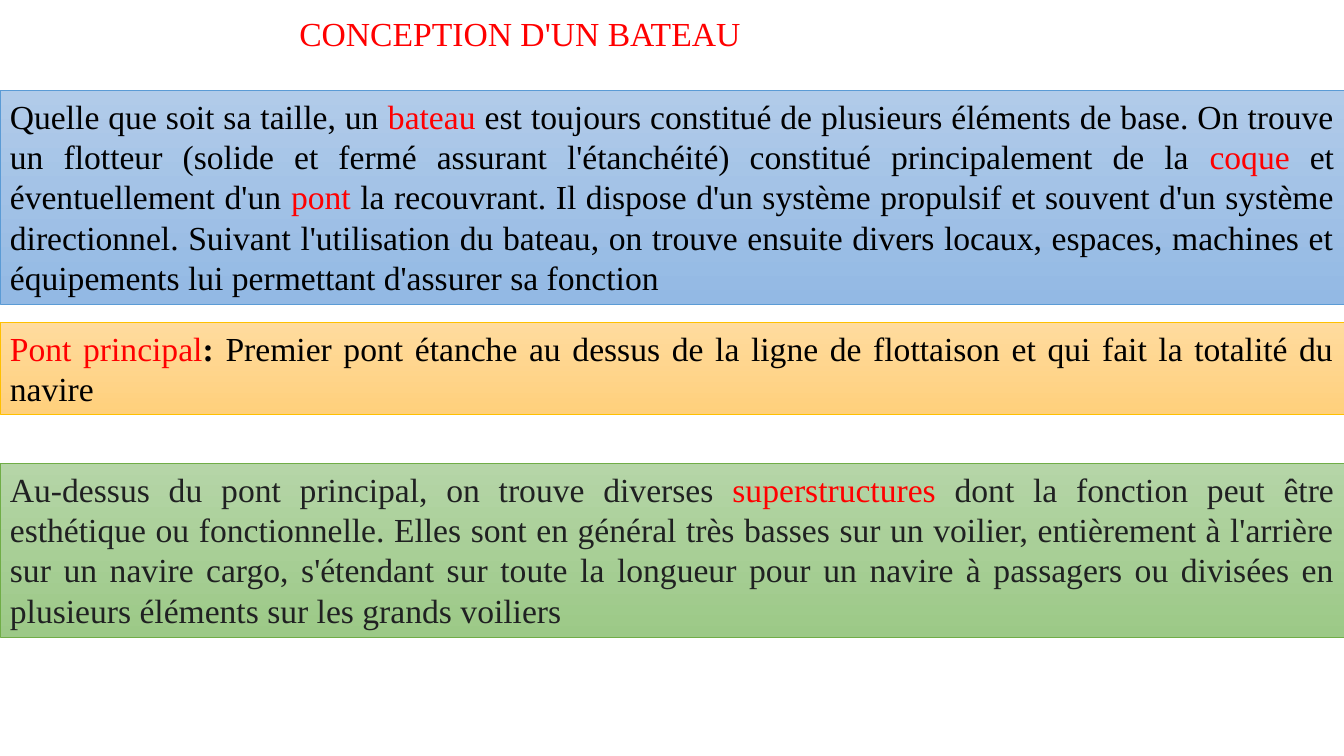
from pptx import Presentation, util as u
from pptx.dml.color import RGBColor
from pptx.enum import shapes, text

RED = RGBColor(0xFF, 0x00, 0x00)
BLACK = RGBColor(0x00, 0x00, 0x00)
CHARCOAL = RGBColor(0x20, 0x21, 0x22)
BLUE_TOP, BLUE_BOTTOM, BLUE_LINE = (
    RGBColor(0xB1, 0xCB, 0xE9), RGBColor(0x93, 0xB9, 0xE4), RGBColor(0x5B, 0x9B, 0xD5))
ORANGE_TOP, ORANGE_BOTTOM, ORANGE_LINE = (
    RGBColor(0xFF, 0xDB, 0x9E), RGBColor(0xFF, 0xD0, 0x7C), RGBColor(0xFF, 0xC0, 0x00))
GREEN_TOP, GREEN_BOTTOM, GREEN_LINE = (
    RGBColor(0xB5, 0xD5, 0xA7), RGBColor(0x9C, 0xC9, 0x87), RGBColor(0x70, 0xAD, 0x47))

presentation = Presentation()
presentation.slide_width = u.Inches(13.33)
presentation.slide_height = u.Inches(7.5)
slide = presentation.slides.add_slide(presentation.slide_layouts[6])


def set_font(paragraph):
    paragraph.font.name = "Times New Roman"
    paragraph.font.size = u.Pt(24)


# Title
title = slide.shapes.add_textbox(u.Inches(2.87), u.Inches(0.08), u.Inches(4.62), u.Inches(0.5))
title.text_frame.word_wrap = False
title.text_frame.auto_size = text.MSO_AUTO_SIZE.SHAPE_TO_FIT_TEXT
paragraph = title.text_frame.paragraphs[0]
paragraph.text = "CONCEPTION D'UN BATEAU"
set_font(paragraph)
paragraph.font.color.rgb = RED

# Full-width panels: top, height, gradient ends, outline, text pieces
panels = [
    (0.9, 2.12, BLUE_TOP, BLUE_BOTTOM, BLUE_LINE, [
        ("Quelle que soit sa taille, un ", BLACK),
        ("bateau ", RED),
        ("est toujours constitué de plusieurs éléments de base. On trouve un flotteur "
         "(solide et fermé assurant l'étanchéité) constitué principalement de la ", BLACK),
        ("coque ", RED),
        ("et éventuellement d'un ", BLACK),
        ("pont", RED),
        (" la recouvrant. Il dispose d'un système propulsif et souvent d'un système "
         "directionnel. Suivant l'utilisation du bateau, on trouve ensuite divers locaux, "
         "espaces, machines et équipements lui permettant d'assurer sa fonction", BLACK)]),
    (3.2, 0.91, ORANGE_TOP, ORANGE_BOTTOM, ORANGE_LINE, [
        ("Pont principal", RED),
        (": ", BLACK),
        ("Premier pont étanche au dessus de la ligne de flottaison et qui fait la "
         "totalité du navire", BLACK)]),
    (4.6, 1.72, GREEN_TOP, GREEN_BOTTOM, GREEN_LINE, [
        ("Au-dessus du pont principal, on trouve diverses ", CHARCOAL),
        ("superstructures", RED),
        (" dont la fonction peut être esthétique ou fonctionnelle. Elles sont en général "
         "très basses sur un voilier, entièrement à l'arrière sur un navire cargo, "
         "s'étendant sur toute la longueur pour un navire à passagers ou divisées en "
         "plusieurs éléments sur les grands voiliers", CHARCOAL)]),
]

for top, height, top_color, bottom_color, line_color, pieces in panels:
    panel = slide.shapes.add_shape(shapes.MSO_SHAPE.RECTANGLE, 0, u.Inches(top),
                                   presentation.slide_width, u.Inches(height))
    panel.shadow.inherit = False
    panel.fill.gradient()
    panel.fill.gradient_angle = 270  # top to bottom
    for stop, color in zip(panel.fill.gradient_stops, (top_color, bottom_color)):
        stop.color.rgb = color
    panel.line.color.rgb = line_color
    panel.line.width = u.Pt(0.5)

    frame = panel.text_frame
    frame.word_wrap = True
    frame.auto_size = text.MSO_AUTO_SIZE.SHAPE_TO_FIT_TEXT
    frame.vertical_anchor = text.MSO_ANCHOR.TOP
    paragraph = frame.paragraphs[0]
    paragraph.alignment = text.PP_ALIGN.JUSTIFY
    set_font(paragraph)
    for words, color in pieces:
        run = paragraph.add_run()
        run.text = words
        run.font.color.rgb = color
        if words == ": ":
            run.font.bold = True

presentation.save("out.pptx")
